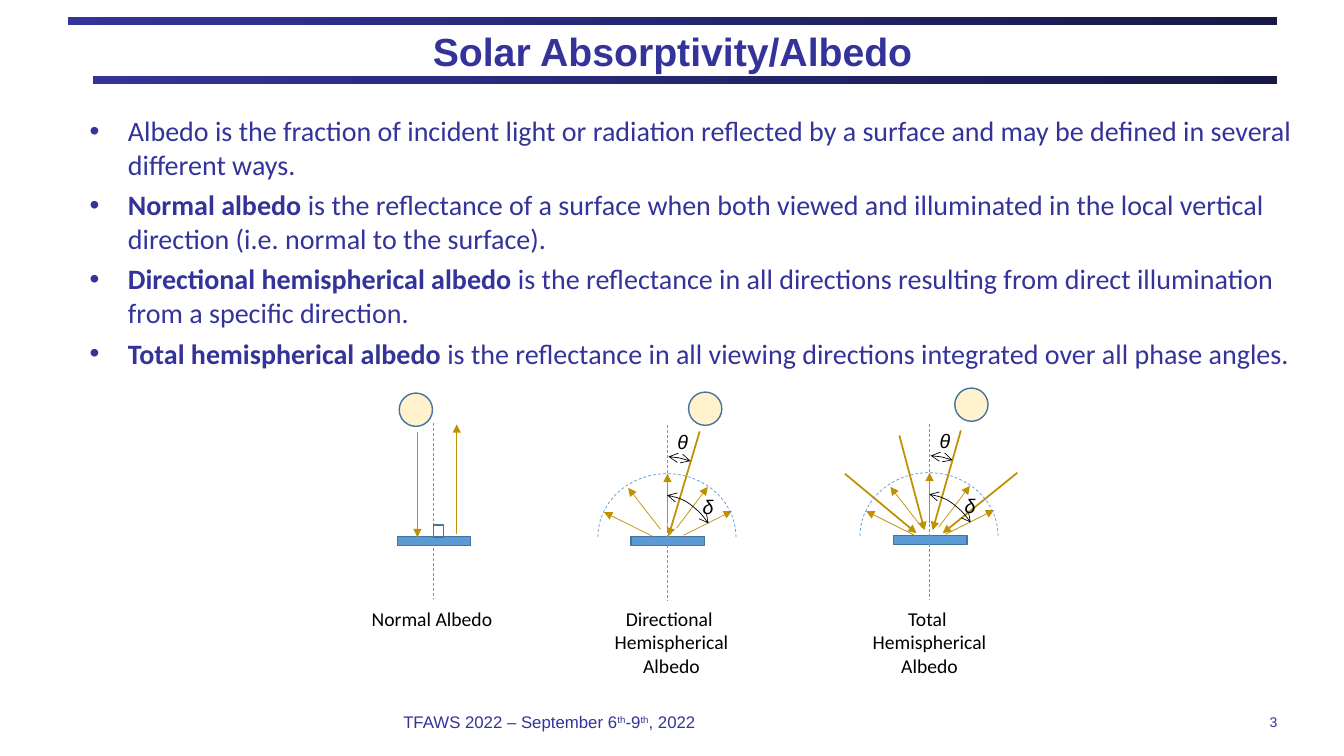
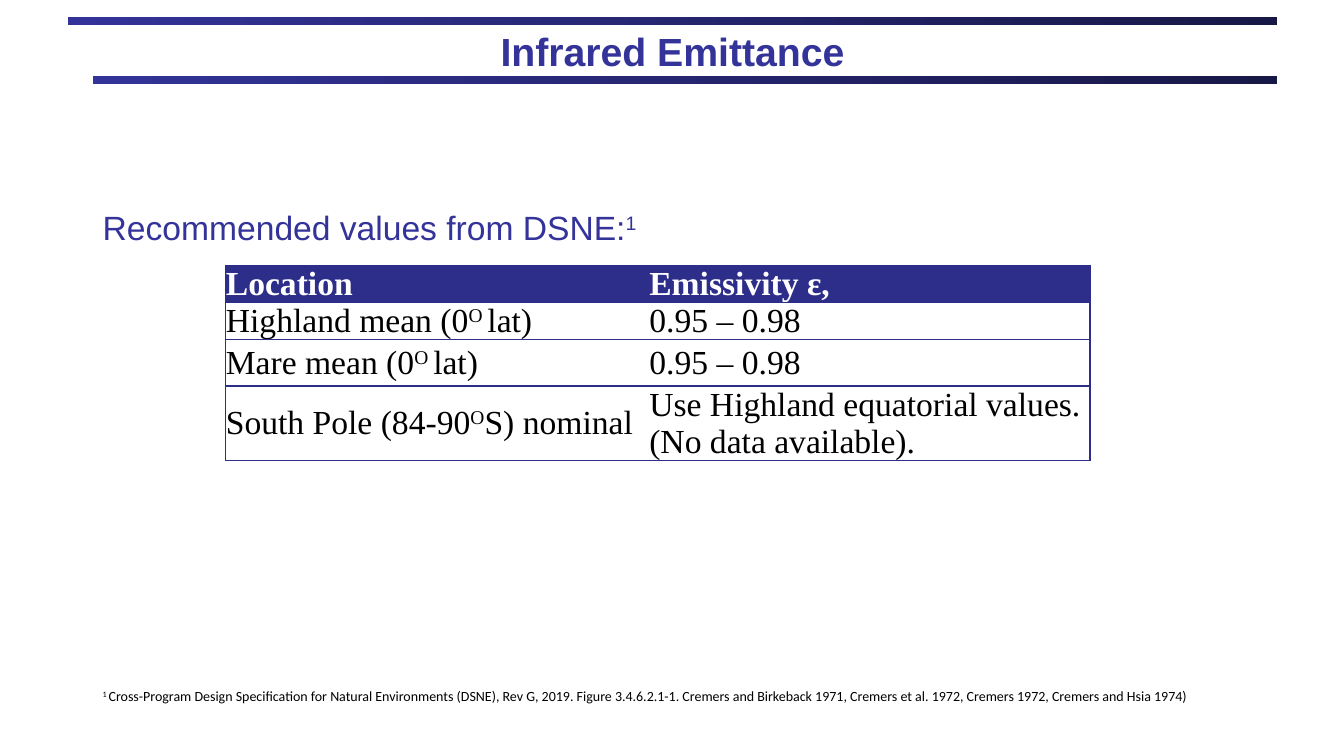
from lxml import etree
from pptx import Presentation
from pptx import util as u
from pptx.dml.color import RGBColor
from pptx.enum import dml, shapes, text
from pptx.oxml.ns import qn

PX = 9144
COLOURS = {
    "navy": "333399", "night": "181847", "header": "2D2D8A", "white": "FFFFFF",
    "black": "000000", "gold": "BF9000", "blue": "5B9BD5", "outline": "43739E",
    "sun": "FFF2CC",
}
ALIGN = {"l": text.PP_ALIGN.LEFT, "c": text.PP_ALIGN.CENTER, "r": text.PP_ALIGN.RIGHT}
ANCHOR = {"t": text.MSO_ANCHOR.TOP, "m": text.MSO_ANCHOR.MIDDLE}
SHAPE = shapes.MSO_SHAPE


def px(*lengths):
    return [u.Emu(length * PX) for length in lengths]


def rgb(name):
    return RGBColor.from_string(COLOURS[name])


def sub(parent, tag, **attributes):
    return etree.SubElement(parent, qn(tag), attributes)


class Deck:
    """Holds the shared style and the slide being drawn."""

    def __init__(self):
        self.deck = Presentation()
        self.deck.slide_width, self.deck.slide_height = px(1333, 750)
        self.page = None

    def add_page(self, title):
        self.page = self.deck.slides.add_slide(self.deck.slide_layouts[5])
        for left, top, width in ((92, 75, 1175), (67, 17, 1200)):
            self.band(left, top, width)
        box = self.page.shapes.title
        box.left, box.top, box.width, box.height = px(67, 21, 1200, 58)
        self.frame(box.text_frame, (10, 0), "m")
        self.fill_text(box.text_frame, [[(title, "b")]], 28, align="c")

    def band(self, left, top, width):
        bar = self.shape(SHAPE.RECTANGLE, left, top, width, 8)
        bar.fill.gradient()
        bar.fill.gradient_angle = 0
        for stop, colour, position in zip(bar.fill.gradient_stops, ("navy", "night"), (0, 1)):
            stop.color.rgb = rgb(colour)
            stop.position = position

    def frame(self, frame, inset=(10, 5), anchor="t", wrap=True):
        frame.margin_left, frame.margin_top = px(*inset)
        frame.margin_right, frame.margin_bottom = px(*inset)
        frame.vertical_anchor = ANCHOR[anchor]
        frame.word_wrap = wrap
        frame.auto_size = text.MSO_AUTO_SIZE.NONE

    def fill_text(self, frame, paragraphs, size, colour="navy", font="Arial",
                  align="l", bullet=False, gap=0):
        for index, spans in enumerate(paragraphs):
            para = frame.paragraphs[0] if index == 0 else frame.add_paragraph()
            if bullet:
                indent = 38 * PX
                properties = para._p.get_or_add_pPr()
                properties.set("marL", str(indent))
                properties.set("indent", str(-indent))
                sub(properties, "a:buFont", typeface="Arial")
                sub(properties, "a:buChar", char="•")
            para.alignment = ALIGN[align]
            if index and gap:
                para.space_before = u.Pt(gap)
            for words, mark in spans:
                span = para.add_run()
                span.text = words
                span.font.size = u.Pt(size)
                span.font.name = font
                span.font.color.rgb = rgb(colour)
                span.font.bold = mark == "b"
                span.font.italic = mark == "i"
                if mark == "sup":
                    span._r.get_or_add_rPr().set("baseline", "30000")

    def text(self, place, paragraphs, size, inset=(10, 5), anchor="t", wrap=True, **style):
        box = self.page.shapes.add_textbox(*px(*place))
        self.frame(box.text_frame, inset, anchor, wrap)
        self.fill_text(box.text_frame, paragraphs, size, **style)

    def footer(self, spans, number):
        self.text((400, 700, 533, 33), [spans], 12, (0, 0), "m")
        self.text((989, 700, 278, 33), [[(number, "")]], 10, (0, 0), "m", align="r")

    def shape(self, kind, left, top, width, height, fill=None, line=None, weight=1):
        item = self.page.shapes.add_shape(kind, *px(left, top, width, height))
        item.shadow.inherit = False
        if fill:
            item.fill.solid()
            item.fill.fore_color.rgb = rgb(fill)
        else:
            item.fill.background()
        if line:
            item.line.color.rgb = rgb(line)
            item.line.width = u.Pt(weight)
        else:
            item.line.fill.background()
        return item

    def arc(self, left, top, width, height, start, end, colour="black", arrows=True):
        item = self.shape(SHAPE.ARC, left, top, width, height, line=colour, weight=0.5)
        item.adjustments[0] = start * 0.6
        item.adjustments[1] = end * 0.6
        if arrows:
            self.heads(item, "a:headEnd", "a:tailEnd", kind="arrow")
        else:
            item.line.dash_style = dml.MSO_LINE.DASH

    def heads(self, item, *ends, kind="triangle"):
        outline = item.element.spPr.find(qn("a:ln"))
        for end in ends:
            sub(outline, end, type=kind)

    def line(self, x1, y1, x2, y2, colour, weight):
        item = self.page.shapes.add_connector(
            shapes.MSO_CONNECTOR.STRAIGHT, *px(x1, y1, x2, y2))
        item.line.color.rgb = rgb(colour)
        item.line.width = u.Pt(weight)
        sub(item.element.spPr, "a:effectLst")
        return item

    def ray(self, x1, y1, x2, y2, weight=0.5):
        self.heads(self.line(x1, y1, x2, y2, "gold", weight), "a:tailEnd")

    def axis(self, x, top, bottom):
        self.line(x, top, x, bottom, "blue", 0.5).line.dash_style = dml.MSO_LINE.DASH

    def plate(self, x, y):
        self.shape(SHAPE.RECTANGLE, x - 36, y, 73, 9, "blue", "outline")

    def sun(self, left, top):
        self.shape(SHAPE.OVAL, left, top, 33, 33, "sun", "outline")

    def label(self, left, width, *lines):
        self.text((left, 597, width, 10 + 24 * len(lines)), [[(words, "")] for words in lines],
                  14, wrap=False, colour="black", font="Calibri", align="c")

    def hemisphere(self, x, y, beams):
        self.plate(x, y)
        for x1, y1, x2, y2 in ((-15, 0, -63, -24), (-7, -7, -39, -48), (0, -12, 0, -62),
                               (16, -1, 64, -25), (9, -8, 40, -49)):
            self.ray(x + x1, y + y1, x + x2, y + y2)
        for x1, y1, x2, y2 in beams:
            self.ray(x + x1, y + y1, x + x2, y + y2, 1.25)
        self.axis(x, y - 110, y + 64)
        self.arc(x - 69, y - 62, 137, 126, 180.2, 359.7, "blue", arrows=False)
        self.arc(x - 71, y - 79, 137, 126, 273.2, 293.4)
        self.arc(x - 74, y - 41, 136, 206, 273.2, 302.1)
        for letter, dx, dy in (("θ", 0, -110), ("δ", 25, -46)):
            self.text((x + dx, y + dy, 30, 34), [[(letter, "i")]], 14,
                      wrap=False, colour="black")

    def table(self, left, top, widths, heights, rows):
        table = self.page.shapes.add_table(
            len(rows), len(widths), *px(left, top, sum(widths), sum(heights))).table
        table.horz_banding = False
        for column, width in zip(table.columns, px(*widths)):
            column.width = width
        for row, height in zip(table.rows, px(*heights)):
            row.height = height
        for r, row in enumerate(rows):
            for c, paragraph in enumerate(row):
                self.cell(table.cell(r, c), paragraph, r == 0, c == 0, c == len(row) - 1)

    def cell(self, cell, spans, header, first, last):
        cell.margin_left = cell.margin_right = cell.margin_top = cell.margin_bottom = 0
        cell.vertical_anchor = ANCHOR["m"]
        properties = cell._tc.get_or_add_tcPr()
        for side, drawn in (("L", first), ("R", last), ("T", True), ("B", True)):
            border = sub(properties, "a:ln" + side, w="12700")
            if drawn:
                fill = sub(border, "a:solidFill")
                sub(fill, "a:srgbClr", val=COLOURS["header"])
            else:
                sub(border, "a:noFill")
        cell.fill.solid()
        cell.fill.fore_color.rgb = rgb("header" if header else "white")
        self.fill_text(cell.text_frame, [spans], 24, "white" if header else "black",
                       "Times New Roman")


def albedo_page(deck):
    deck.add_page("Solar Absorptivity/Albedo")
    deck.footer([("TFAWS 2022 – September 6", ""), ("th", "sup"), ("-9", ""),
                 ("th", "sup"), (", 2022", "")], "3")
    deck.text((79, 108, 1225, 400), [
        [("Albedo is the fraction of incident light or radiation reflected by a surface "
          "and may be defined in several different ways.", "")],
        [("Normal albedo ", "b"),
         ("is the reflectance of a surface when both viewed and illuminated in the local "
          "vertical direction (i.e. normal to the surface).", "")],
        [("Directional hemispherical albedo ", "b"),
         ("is the reflectance in all directions resulting from direct illumination from "
          "a specific direction.", "")],
        [("Total hemispherical albedo ", "b"),
         ("is the reflectance in all viewing directions integrated over all phase "
          "angles.", "")],
    ], 20, font="Calibri", bullet=True, gap=4.9)

    deck.plate(430, 532)
    deck.ray(453, 530, 453, 421)
    deck.ray(414, 429, 414, 533, 1.25)
    deck.axis(430, 420, 594)
    deck.shape(SHAPE.RECTANGLE, 430, 521, 10, 12, line="outline")
    deck.hemisphere(662, 532, [(32, -104, 1, 0)])
    deck.hemisphere(922, 531, [(31, -104, 3, -5), (87, -62, 13, -2),
                               (-30, -99, -5, -5), (-84, -61, -13, -2)])
    for left, top in ((396, 390), (683, 389), (947, 385)):
        deck.sun(left, top)
    deck.label(358, 141, "Normal Albedo")
    deck.label(599, 134, "Directional ", "Hemispherical", "Albedo")
    deck.label(855, 134, "Total ", "Hemispherical", "Albedo")


def emittance_page(deck):
    deck.add_page("Infrared Emittance")
    deck.text((92, 200, 835, 50),
              [[("Recommended values from DSNE:", ""), ("1", "sup")]], 24)
    values = [("0.95 – 0.98", "")]
    deck.table(224, 263, (420, 437), (37, 37, 46, 74), [
        ([("Location", "b")], [("Emissivity ε,", "b")]),
        ([("Highland mean (0", ""), ("O ", "sup"), ("lat)", "")], values),
        ([("Mare mean (0", ""), ("O ", "sup"), ("lat)", "")], values),
        ([("South Pole (84-90", ""), ("O", "sup"), ("S) nominal", "")],
         [("Use Highland equatorial values. (No data available).", "")]),
    ])
    deck.text((92, 677, 1178, 27), [[
        ("1 ", "sup"),
        ("Cross-Program Design Specification for Natural Environments (DSNE), Rev G, 2019. "
         "Figure 3.4.6.2.1-1. Cremers and Birkeback 1971, Cremers et al. 1972, "
         "Cremers 1972, Cremers and Hsia 1974)", ""),
    ]], 10, colour="black", font="Calibri")


def main():
    deck = Deck()
    albedo_page(deck)
    emittance_page(deck)
    deck.deck.save("out.pptx")


if __name__ == "__main__":
    main()
